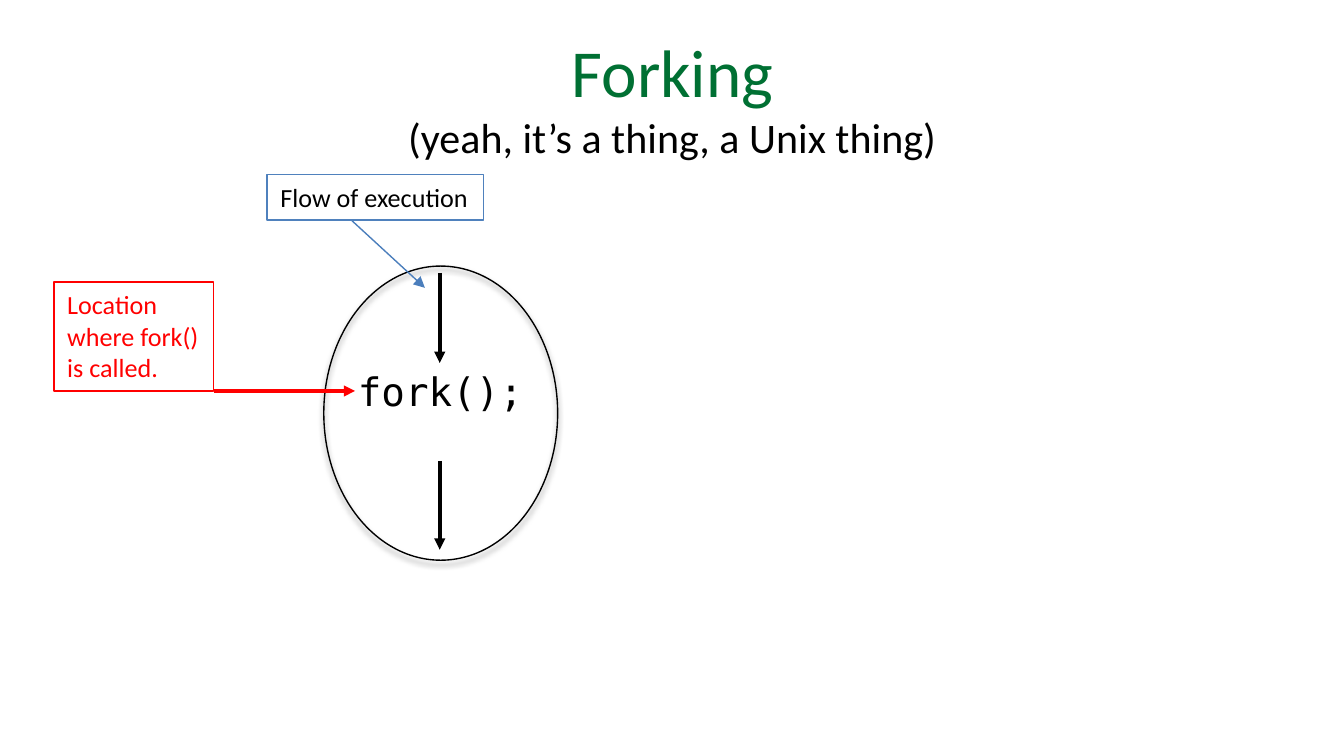
from lxml.etree import SubElement
from pptx import Presentation
from pptx.dml.color import RGBColor
from pptx.enum.shapes import MSO_CONNECTOR, MSO_SHAPE
from pptx.enum.text import MSO_ANCHOR, PP_ALIGN
from pptx.oxml import parse_xml
from pptx.oxml.ns import nsdecls, qn
from pptx.util import Cm, Pt


def color(hex_code):
    return RGBColor.from_string(hex_code)


def write(frame, lines, align):
    """Fill a text frame with one paragraph per (text, size, font, colour)."""
    for index, (text, size, font, hex_code) in enumerate(lines):
        para = frame.add_paragraph() if index else frame.paragraphs[0]
        para.alignment = align
        para.space_before = Pt(0)
        span = para.add_run()
        span.text = text
        span.font.size = Pt(size)
        span.font.name = font
        span.font.color.rgb = color(hex_code)


deck = Presentation()
deck.slide_width, deck.slide_height = Cm(25.4), Cm(14.29)
page = deck.slides.add_slide(deck.slide_layouts[5])

# Title with subtitle line
title = page.shapes.title
title.left, title.top, title.width, title.height = Cm(5.18), Cm(0.05), Cm(15.06), Cm(3.53)
write(title.text_frame, [
    ("Forking", 36, "Calibri", "007033"),
    ("(yeah, it’s a thing, a Unix thing)", 22.5, "Calibri", "000000"),
], PP_ALIGN.CENTER)

# Process outline with a soft shadow below
process = page.shapes.add_shape(MSO_SHAPE.OVAL, Cm(6.12), Cm(5.03), Cm(4.42), Cm(5.56))
process.fill.background()
process.line.color.rgb = color("000000")
process.line.width = Pt(0.75)
process._element.spPr.append(parse_xml(
    f'<a:effectLst {nsdecls("a")}>'
    '<a:outerShdw blurRad="38100" dist="25400" dir="5400000" rotWithShape="0">'
    '<a:srgbClr val="000000"><a:alpha val="50000"/></a:srgbClr>'
    '</a:outerShdw></a:effectLst>'))

# The call inside the process
call = page.shapes.add_textbox(Cm(6.65), Cm(6.83), Cm(3.35), Cm(1.12))
write(call.text_frame, [("fork();", 21, "DejaVu Sans Mono", "000000")], PP_ALIGN.CENTER)

for frame in (title.text_frame, call.text_frame):
    frame.word_wrap = True
    frame.vertical_anchor = MSO_ANCHOR.MIDDLE
    frame.margin_left = frame.margin_right = Cm(0.1)
    frame.margin_top = frame.margin_bottom = Cm(0.1)

# Arrows: start x, start y, end x, end y, colour, width
arrows = [
    (8.31, 5.16, 8.31, 6.86, "000000", 2),
    (8.31, 8.71, 8.31, 10.39, "000000", 2),
    (4.04, 7.39, 6.71, 7.39, "FF0000", 2),
    (6.65, 4.17, 8.03, 5.44, "4B7EBC", 0.75),
]
for x1, y1, x2, y2, hex_code, width in arrows:
    arrow = page.shapes.add_connector(MSO_CONNECTOR.STRAIGHT, Cm(x1), Cm(y1), Cm(x2), Cm(y2))
    arrow.line.color.rgb = color(hex_code)
    arrow.line.width = Pt(width)
    SubElement(arrow.line._get_or_add_ln(), qn("a:tailEnd"), type="triangle")
    SubElement(arrow._element.spPr, qn("a:effectLst"))

# Callouts: left, top, width, height, line colour, text colour, lines
callouts = [
    (1.02, 5.33, 3.02, 2.06, "FF0000", "FF0000", ["Location", "where fork()", "is called."]),
    (5.05, 3.3, 4.09, 0.86, "4F81BD", "000000", ["Flow of execution"]),
]
for left, top, width, height, line_hex, text_hex, lines in callouts:
    box = page.shapes.add_shape(MSO_SHAPE.RECTANGLE, Cm(left), Cm(top), Cm(width), Cm(height))
    box.shadow.inherit = False
    box.fill.background()
    box.line.color.rgb = color(line_hex)
    box.line.width = Pt(0.75)
    box.text_frame.word_wrap = False
    box.text_frame.vertical_anchor = MSO_ANCHOR.TOP
    write(box.text_frame, [(text, 14, "Calibri", text_hex) for text in lines], PP_ALIGN.LEFT)

deck.save("out.pptx")
